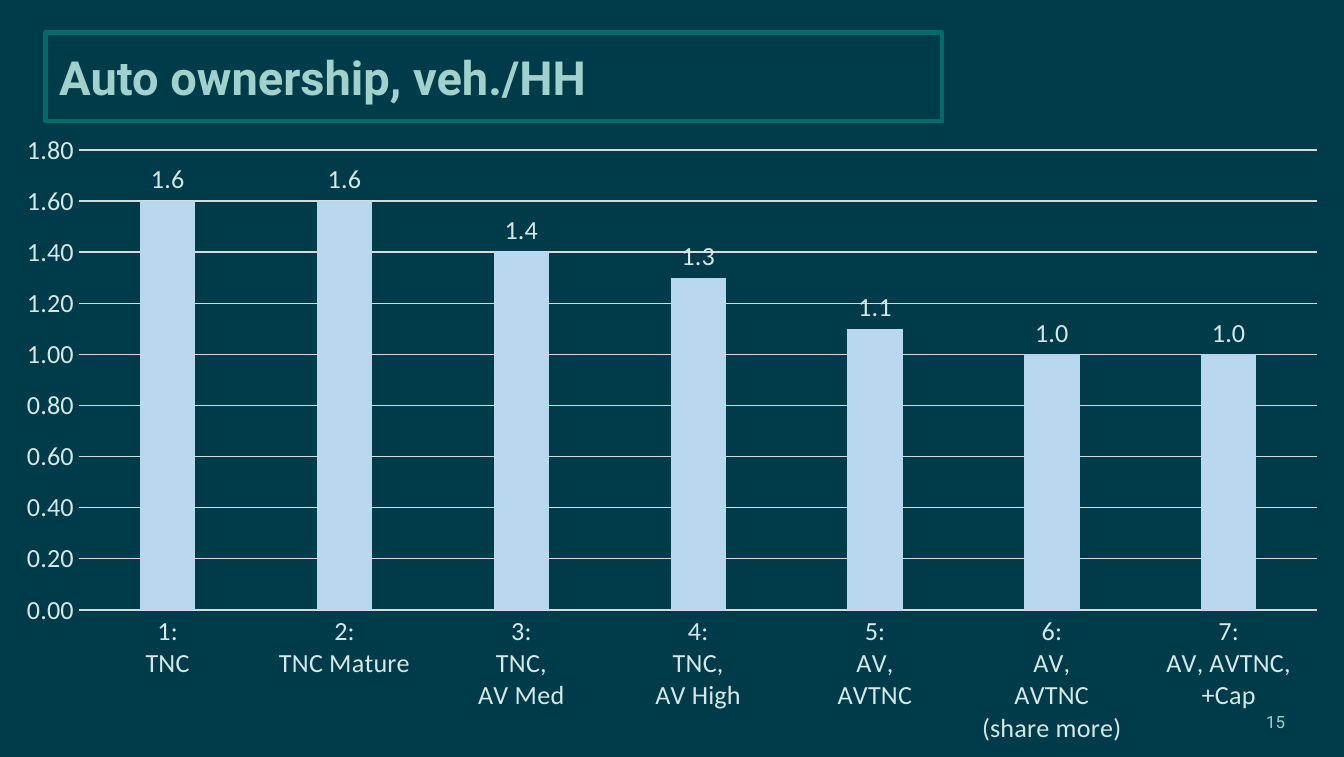
from pptx import Presentation
from pptx import util as u
from pptx.chart.data import CategoryChartData
from pptx.dml.color import RGBColor
from pptx.enum import chart as ch, text

HEX = {"back": "003B49", "frame": "006C69", "mint": "A0D1CC",
       "label": "D5E7E6", "grid": "D9D9D9", "bar": "B9D8ED"}
WIDE, HIGH = u.Inches(10), u.Inches(5.63)

AUTOS = {
    "1:\nTNC": 1.6,
    "2:\nTNC Mature": 1.6,
    "3:\nTNC,\nAV Med": 1.4,
    "4:\nTNC,\nAV High": 1.3,
    "5:\nAV,\nAVTNC": 1.1,
    "6:\nAV,\nAVTNC\n(share more)": 1.0,
    "7:\nAV, AVTNC, +Cap": 1.0,
}


def hue(name):
    return RGBColor.from_string(HEX[name])


def area(left, top, width, height):
    """Turn shares of the slide's size into lengths."""
    return [int(share * side) for share, side
            in zip((left, top, width, height), (WIDE, HIGH) * 2)]


def style(font, name, size, color, bold=False):
    font.name, font.size, font.bold = name, u.Pt(size), bold
    font.color.rgb = hue(color)


def rule(line, color, width):
    line.color.rgb = hue(color)
    line.width = u.Pt(width)


def add_title(slide, box, words):
    head = slide.shapes.title
    head.left, head.top, head.width, head.height = box
    rule(head.line, "frame", 2.5)
    frame = head.text_frame
    frame.text = words
    frame.word_wrap = True
    frame.auto_size = text.MSO_AUTO_SIZE.NONE
    frame.vertical_anchor = text.MSO_ANCHOR.MIDDLE
    frame.margin_left = frame.margin_right = u.Inches(0.1)
    frame.margin_top = frame.margin_bottom = u.Inches(0.1)
    para = frame.paragraphs[0]
    para.alignment = text.PP_ALIGN.LEFT
    style(para.font, "Roboto", 25.2, "mint", True)


def add_number(slide, box, number):
    frame = slide.shapes.add_textbox(*box).text_frame
    frame.word_wrap = True
    frame.vertical_anchor = text.MSO_ANCHOR.MIDDLE
    para = frame.paragraphs[0]
    para.text = number
    para.alignment = text.PP_ALIGN.RIGHT
    style(para.font, "Roboto", 9, "mint")


def add_bars(slide, box, values):
    data = CategoryChartData()
    data.categories = list(values)
    data.add_series("Series 1", list(values.values()))
    chart = slide.shapes.add_chart(
        ch.XL_CHART_TYPE.COLUMN_CLUSTERED, *box, data).chart
    chart.has_legend = chart.has_title = False
    style(chart.font, "Calibri", 10, "label")

    # Axes and gridlines
    cats, vals = chart.category_axis, chart.value_axis
    for axis in (cats, vals):
        axis.major_tick_mark = axis.minor_tick_mark = ch.XL_TICK_MARK.NONE
        style(axis.tick_labels.font, "Calibri", 14, "label")
    rule(cats.format.line, "grid", 0.75)
    rule(vals.major_gridlines.format.line, "grid", 0.75)
    vals.format.line.fill.background()
    vals.minimum_scale, vals.maximum_scale, vals.major_unit = 0, 1.8, 0.2
    vals.tick_labels.number_format = "0.00"
    vals.tick_labels.number_format_is_linked = False

    # Bars and their labels
    plot = chart.plots[0]
    plot.gap_width = 219
    plot.vary_by_categories = False
    bars = plot.series[0]
    bars.format.fill.solid()
    bars.format.fill.fore_color.rgb = hue("bar")
    tags = bars.data_labels
    tags.show_value = True
    tags.number_format = "#,##0.0"
    tags.number_format_is_linked = False
    tags.position = ch.XL_LABEL_POSITION.OUTSIDE_END
    style(tags.font, "Calibri", 14, "label")


def main():
    deck = Presentation()
    deck.slide_width, deck.slide_height = WIDE, HIGH
    slide = deck.slides.add_slide(deck.slide_layouts[5])
    slide.background.fill.solid()
    slide.background.fill.fore_color.rgb = hue("back")

    add_title(slide, area(0.034, 0.043, 0.667, 0.117),
              "Auto ownership, veh./HH")
    add_number(slide, area(0.706, 0.927, 0.26, 0.053), "15")
    add_bars(slide, area(0, 0.16, 1, 0.84), AUTOS)
    deck.save("out.pptx")


if __name__ == "__main__":
    main()
